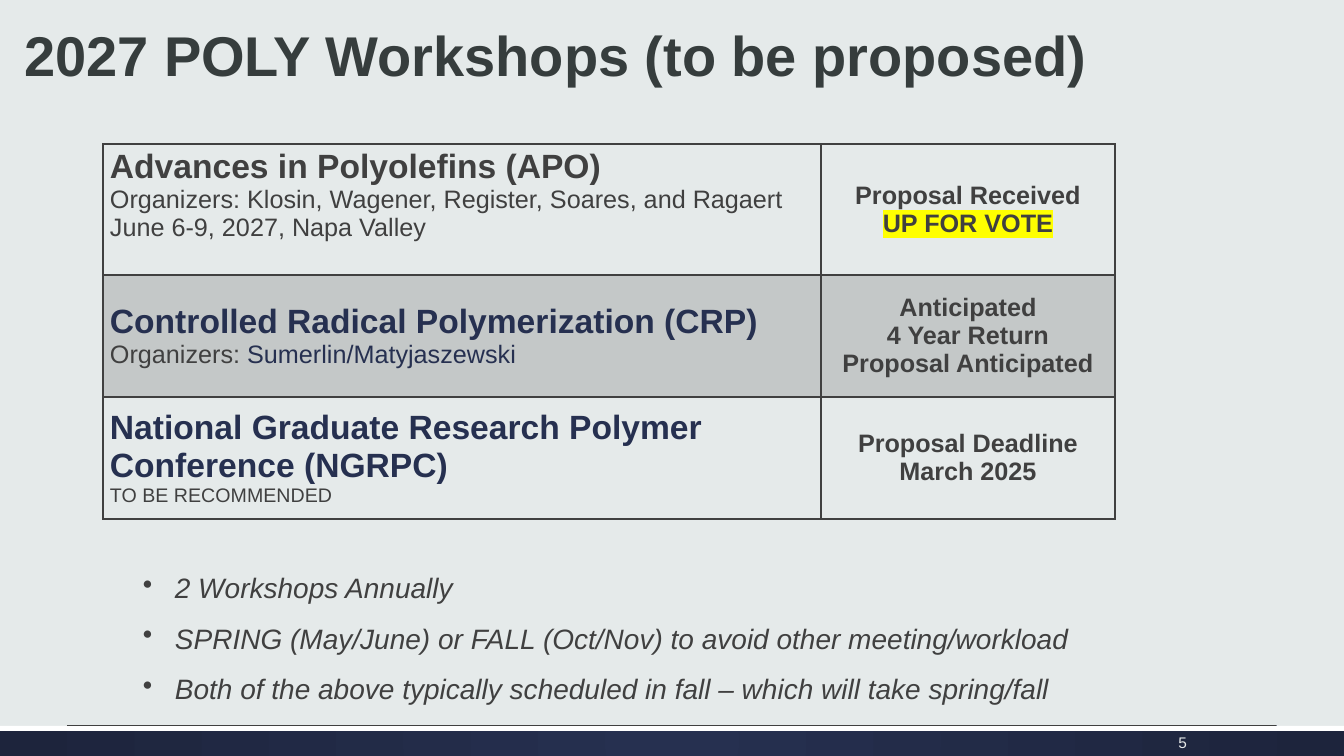
from dataclasses import dataclass

from lxml import etree
from pptx import Presentation
from pptx import util as u
from pptx.dml.color import RGBColor
from pptx.enum import shapes, text
from pptx.oxml import ns


@dataclass(frozen=True)
class Theme:
    font: str = "Arial"
    paper: str = "E5EAEA"
    title: str = "363D3D"
    ink: str = "404040"
    navy: str = "263050"
    night: str = "1D243C"
    white: str = "FFFFFF"
    number: str = "E5E8E8"
    marker: str = "FFFF00"
    title_size: int = 40
    name_size: int = 24
    bullet_size: int = 20
    body_size: int = 18
    note_size: int = 14
    number_size: int = 11


THEME = Theme()
NAME = dict(size=THEME.name_size, bold=True)
BODY = dict(size=THEME.body_size)
NOTE = dict(size=THEME.note_size)
STATUS = dict(size=THEME.body_size, bold=True, align=text.PP_ALIGN.CENTER)

TITLE = "2027 POLY Workshops (to be proposed)"
# Each workshop: paragraphs of (words, style), status lines, shading, row height, bottom inset
WORKSHOPS = [
    dict(about=[("Advances in Polyolefins (APO)", NAME),
                ("Organizers: Klosin, Wagener, Register, Soares, and Ragaert", BODY),
                ("June 6-9, 2027, Napa Valley", BODY)],
         status=["Proposal Received", "UP FOR VOTE"],
         shaded=False, height=131, inset=29),
    dict(about=[("Controlled Radical Polymerization (CRP)", dict(NAME, color=THEME.navy)),
                ("Organizers: |Sumerlin/Matyjaszewski", BODY)],
         status=["Anticipated", "4 Year Return", "Proposal Anticipated"],
         shaded=True, height=122, inset=0),
    dict(about=[("National Graduate Research Polymer Conference (NGRPC)",
                 dict(NAME, color=THEME.navy)),
                ("TO BE RECOMMENDED", NOTE)],
         status=["Proposal Deadline", "March 2025"],
         shaded=False, height=122, inset=0),
]
HIGHLIGHTED = "UP FOR VOTE"
NOTES = [
    "2 Workshops Annually",
    "SPRING (May/June) or FALL (Oct/Nov) to avoid other meeting/workload",
    "Both of the above typically scheduled in fall – which will take spring/fall",
]
PAGE_NUMBER = "5"

PAGE_W, PAGE_H = 1344, 756
TABLE_LEFT, TABLE_TOP = 103, 144
COLUMNS = [718, 294]
CELL_INSET = 7
BAR_TOP, BAR_H, BAND_H = 726, 30, 5
RULE_LEFT, RULE_RIGHT, RULE_Y = 67, 1276, 725
BULLET_INDENT = 32


def px(length):
    return u.Emu(round(length * 914400 / 100.8))


def rgb(color):
    return RGBColor.from_string(color)


def add_xml(parent, tag, **attributes):
    return etree.SubElement(parent, ns.qn(tag), attributes)


def write(para, words, size, color=THEME.ink, bold=False, italic=False, align=None):
    """Fill a paragraph; words after a | are set in navy."""
    para.alignment = align
    font = para.font
    font.name, font.size, font.bold, font.italic = THEME.font, u.Pt(size), bold, italic
    font.color.rgb = rgb(color)
    for index, part in enumerate(words.split("|")):
        span = para.add_run()
        span.text = part
        if index:
            span.font.color.rgb = rgb(THEME.navy)


def write_all(frame, lines):
    for index, (words, style) in enumerate(lines):
        para = frame.add_paragraph() if index else frame.paragraphs[0]
        write(para, words, **style)


def add_box(page, left, top, width, height):
    frame = page.shapes.add_textbox(px(left), px(top), px(width), px(height)).text_frame
    frame.word_wrap = True
    return frame


def add_bar(page, top, height):
    bar = page.shapes.add_shape(shapes.MSO_SHAPE.RECTANGLE, 0, px(top), px(PAGE_W), px(height))
    bar.shadow.inherit = False
    bar.line.fill.background()
    return bar


def add_footer(page):
    bar = add_bar(page, BAR_TOP, BAR_H)
    bar.fill.gradient()
    for stop, color in zip(bar.fill.gradient_stops, (THEME.navy, THEME.night)):
        stop.color.rgb = rgb(color)
    gradient = bar.fill._xPr.find(ns.qn("a:gradFill"))
    gradient.remove(gradient.find(ns.qn("a:lin")))
    circle = add_xml(gradient, "a:path", path="circle")
    add_xml(circle, "a:fillToRect", l="50000", t="50000", r="50000", b="50000")

    band = add_bar(page, BAR_TOP, BAND_H)
    band.fill.solid()
    band.fill.fore_color.rgb = rgb(THEME.white)

    rule = page.shapes.add_connector(shapes.MSO_CONNECTOR.STRAIGHT, px(RULE_LEFT), px(RULE_Y),
                                     px(RULE_RIGHT), px(RULE_Y))
    rule.line.width = u.Pt(0.5)
    rule.line.color.rgb = rgb(THEME.ink)
    add_xml(rule._element.spPr, "a:effectLst")

    frame = add_box(page, 1126, 729, 71, 26)
    frame.vertical_anchor = text.MSO_ANCHOR.MIDDLE
    write(frame.paragraphs[0], PAGE_NUMBER, THEME.number_size, THEME.number,
          align=text.PP_ALIGN.RIGHT)


def format_cell(cell, shaded, bottom):
    cell.vertical_anchor = text.MSO_ANCHOR.MIDDLE
    cell.margin_left = cell.margin_right = px(CELL_INSET)
    cell.margin_top, cell.margin_bottom = 0, px(bottom)
    props = cell._tc.get_or_add_tcPr()
    for side in ("L", "R", "T", "B"):
        border = add_xml(props, f"a:ln{side}", w=str(u.Pt(1)))
        add_xml(add_xml(border, "a:solidFill"), "a:srgbClr", val=THEME.ink)
    if shaded:
        cell.fill.solid()
        cell.fill.fore_color.rgb = rgb(THEME.ink)
        add_xml(props.find(ns.qn("a:solidFill"))[0], "a:alpha", val="20000")
    else:
        cell.fill.background()


def add_workshops(page):
    heights = [workshop["height"] for workshop in WORKSHOPS]
    table = page.shapes.add_table(len(WORKSHOPS), len(COLUMNS), px(TABLE_LEFT), px(TABLE_TOP),
                                  px(sum(COLUMNS)), px(sum(heights))).table
    table.first_row = table.horz_banding = False
    for column, width in zip(table.columns, COLUMNS):
        column.width = px(width)
    for row, workshop in zip(table.rows, WORKSHOPS):
        row.height = px(workshop["height"])
        about, status = row.cells
        format_cell(about, workshop["shaded"], workshop["inset"])
        format_cell(status, workshop["shaded"], 0)
        write_all(about.text_frame, workshop["about"])
        write_all(status.text_frame, [(line, STATUS) for line in workshop["status"]])
        for para in status.text_frame.paragraphs:
            if para.text == HIGHLIGHTED:
                marker = add_xml(para.runs[0].font._element, "a:highlight")
                add_xml(marker, "a:srgbClr", val=THEME.marker)


def add_notes(page):
    frame = add_box(page, 133, 549, 982, 156)
    style = dict(size=THEME.bullet_size, italic=True)
    write_all(frame, [(note, style) for note in NOTES])
    for para in frame.paragraphs:
        para.line_spacing = 1.5
        props = para._p.get_or_add_pPr()
        props.set("marL", str(px(BULLET_INDENT)))
        props.set("indent", str(px(-BULLET_INDENT)))
        bullet = etree.Element(ns.qn("a:buChar"), char="•")
        props.find(ns.qn("a:defRPr")).addprevious(bullet)


def add_title(page):
    title = page.shapes.title
    title.left, title.top, title.width, title.height = map(px, (14, 33, 1225, 61))
    frame = title.text_frame
    frame.word_wrap = True
    frame.vertical_anchor = text.MSO_ANCHOR.BOTTOM
    para = frame.paragraphs[0]
    write(para, TITLE, THEME.title_size, THEME.title, bold=True, align=text.PP_ALIGN.LEFT)
    para.line_spacing = 0.9


def main():
    deck = Presentation()
    deck.slide_width, deck.slide_height = px(PAGE_W), px(PAGE_H)
    page = deck.slides.add_slide(deck.slide_layouts[5])
    page.background.fill.solid()
    page.background.fill.fore_color.rgb = rgb(THEME.paper)
    add_footer(page)
    add_title(page)
    add_notes(page)
    add_workshops(page)
    deck.save("out.pptx")


if __name__ == "__main__":
    main()
